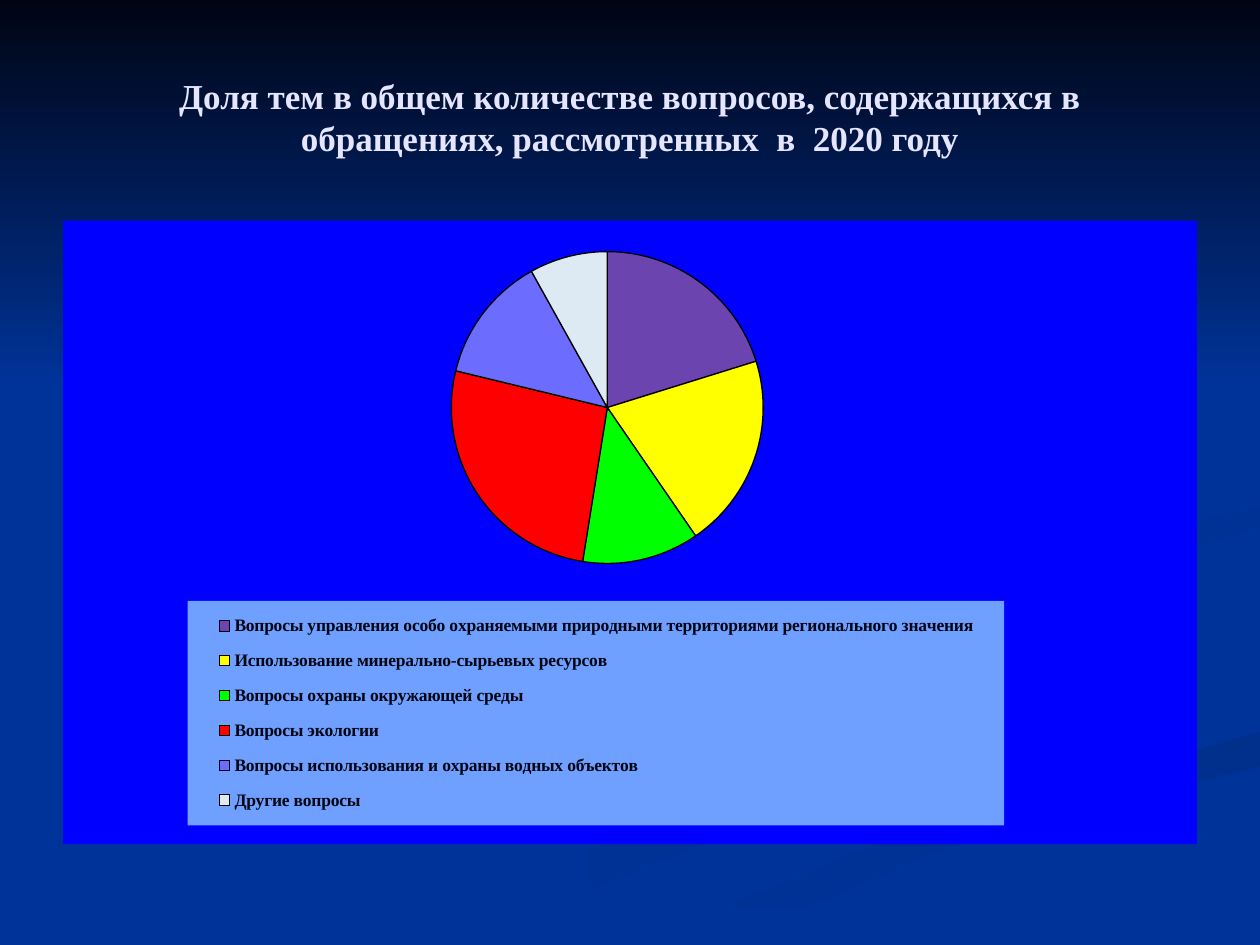
from lxml.etree import fromstring as parse_xml
from pptx import Presentation as Deck
from pptx.chart.data import CategoryChartData as Data
from pptx.dml.color import RGBColor as Rgb
from pptx.enum.chart import XL_CHART_TYPE as Kind, XL_LEGEND_POSITION as Side
from pptx.enum.shapes import MSO_SHAPE as Form
from pptx.enum.text import MSO_ANCHOR as Anchor, PP_ALIGN as Align
from pptx.util import Pt

HUES = {
    "back": "003399", "dark": "000514", "title": "E5E5FF", "panel": "0000FF",
    "key": "6F9FFF", "line": "000000", "wave": "003193", "deep": "002F8C",
    "fold": "003091", "curl": "002F8E", "parks": "6C44AF", "mines": "FFFF00",
    "nature": "00FF00", "ecology": "FF0000", "water": "6C6CFF", "other": "DDEAF3",
}
SPACES = ('xmlns:c="http://schemas.openxmlformats.org/drawingml/2006/chart" '
          'xmlns:a="http://schemas.openxmlformats.org/drawingml/2006/main"')
WIDE, HIGH = 720, 540

WAVES = [
    ([(414, 330), (565, 405), (359, 476), (216, HIGH), (260, HIGH),
      (428, 472), (576, 418), (442, 357)], "back", "wave", 0),
    ([(521, 334), (679, 410), (644, 436), (661, 418), (552, 369)],
     "back", "wave", 45),
    ([(362, HIGH), (411, HIGH), (541, 484), (WIDE, 438), (WIDE, 418),
      (501, 482)], "deep", "back", 90),
    ([(522, 334), (679, 410), (507, 472), (343, HIGH), (362, HIGH),
      (501, 482), (WIDE, 418), (WIDE, 387), (563, 331), (WIDE, 289),
      (WIDE, 279)], "back", None, 0),
    ([(562, 331), (595, 357), (580, 340), (WIDE, 302), (WIDE, 289)],
     "fold", "back", 45),
    ([(492, 310), (644, 248), (549, 168), (640, 241), (415, 333),
      (448, 360)], "curl", "back", 45),
]
TOPICS = [
    ("Вопросы управления особо охраняемыми природными территориями регионального значения", 20, "parks"),
    ("Использование минерально-сырьевых ресурсов", 20, "mines"),
    ("Вопросы охраны окружающей среды", 12, "nature"),
    ("Вопросы экологии", 26, "ecology"),
    ("Вопросы использования и охраны водных объектов", 13, "water"),
    ("Другие вопросы", 8, "other"),
]


def hue(name):
    return Rgb.from_string(HUES[name])


def layout(x, y, wide, high, inner=False):
    target = '<c:layoutTarget val="inner"/>' if inner else ""
    sizes = "".join(f'<c:{tag} val="{val}"/>' for tag, val in
                    zip("xywh", (x, y, wide, high)))
    return parse_xml(f'<c:layout {SPACES}><c:manualLayout>{target}'
                     '<c:xMode val="edge"/><c:yMode val="edge"/>'
                     f'{sizes}</c:manualLayout></c:layout>')


def solid(name):
    return parse_xml(f'<c:spPr {SPACES}><a:solidFill><a:srgbClr val="{HUES[name]}"/>'
                     '</a:solidFill><a:ln><a:noFill/></a:ln></c:spPr>')


class Page:
    def __init__(self, slide, face="Times New Roman"):
        self.slide = slide
        self.face = face
        fill = slide.background.fill
        fill.solid()
        fill.fore_color.rgb = hue("back")

    def paint(self, shape, first, last, angle):
        shape.shadow.inherit = False
        shape.line.fill.background()
        fill = shape.fill
        if last is None:
            fill.solid()
            fill.fore_color.rgb = hue(first)
            return
        fill.gradient()
        fill.gradient_angle = -angle % 360
        for stop, name in zip(fill.gradient_stops, (first, last)):
            stop.color.rgb = hue(name)

    def wave(self, dots, first, last, angle):
        path = self.slide.shapes.build_freeform(*dots[0], scale=Pt(1))
        path.add_line_segments(dots[1:], close=True)
        self.paint(path.convert_to_shape(), first, last, angle)

    def band(self, x, y, wide, high, first, last):
        shape = self.slide.shapes.add_shape(
            Form.RECTANGLE, Pt(x), Pt(y), Pt(wide), Pt(high))
        self.paint(shape, first, last, 90)

    def font(self, font, size, name, bold=True):
        font.name, font.size, font.bold = self.face, Pt(size), bold
        font.color.rgb = hue(name)

    def title(self, x, y, wide, high, words):
        frame = self.slide.shapes.add_textbox(
            Pt(x), Pt(y), Pt(wide), Pt(high)).text_frame
        frame.word_wrap = True
        frame.vertical_anchor = Anchor.MIDDLE
        para = frame.paragraphs[0]
        para.alignment = Align.CENTER
        run = para.add_run()
        run.text = words
        self.font(run.font, 20, "title")

    def pie(self, x, y, wide, high, topics):
        data = Data()
        data.categories = [name for name, _, _ in topics]
        data.add_series("Series 1", [val for _, val, _ in topics])
        chart = self.slide.shapes.add_chart(
            Kind.PIE, Pt(x), Pt(y), Pt(wide), Pt(high), data).chart
        chart.has_title = False
        chart.font.name, chart.font.size = self.face, Pt(10)
        plot = chart.plots[0]
        plot.vary_by_categories = True
        for spot, (_, _, name) in enumerate(topics):
            form = plot.series[0].points[spot].format
            form.fill.solid()
            form.fill.fore_color.rgb = hue(name)
            form.line.color.rgb = hue("line")
            form.line.width = Pt(0.75)
        self.legend(chart)
        root = chart.element
        root.chart.addnext(solid("panel"))
        area = root.chart.plotArea
        for old in area.xpath("c:layout"):
            area.remove(old)
        area.insert(0, layout(0, 0.05, 0.96, 0.5, inner=True))

    def legend(self, chart):
        chart.has_legend = True
        key = chart.legend
        key.position = Side.BOTTOM
        key.include_in_layout = False
        self.font(key.font, 10, "dark")
        node = chart.element.xpath("c:chart/c:legend")[0]
        for old in node.xpath("c:layout"):
            node.remove(old)
        node.xpath("c:legendPos")[0].addnext(layout(0.11, 0.61, 0.72, 0.36))
        node.xpath("c:txPr")[0].addprevious(solid("key"))


def main():
    deck = Deck()
    deck.slide_width, deck.slide_height = Pt(WIDE), Pt(HIGH)
    page = Page(deck.slides.add_slide(deck.slide_layouts[6]))
    for wave in WAVES:
        page.wave(*wave)
    page.band(0, 0, WIDE, 222, "dark", "back")
    page.title(36, 21.6, 648, 90,
               "Доля тем в общем количестве вопросов, содержащихся в "
               "обращениях, рассмотренных  в  2020 году")
    page.pie(36, 126, 648, 356.4, TOPICS)
    deck.save("out.pptx")


if __name__ == "__main__":
    main()
